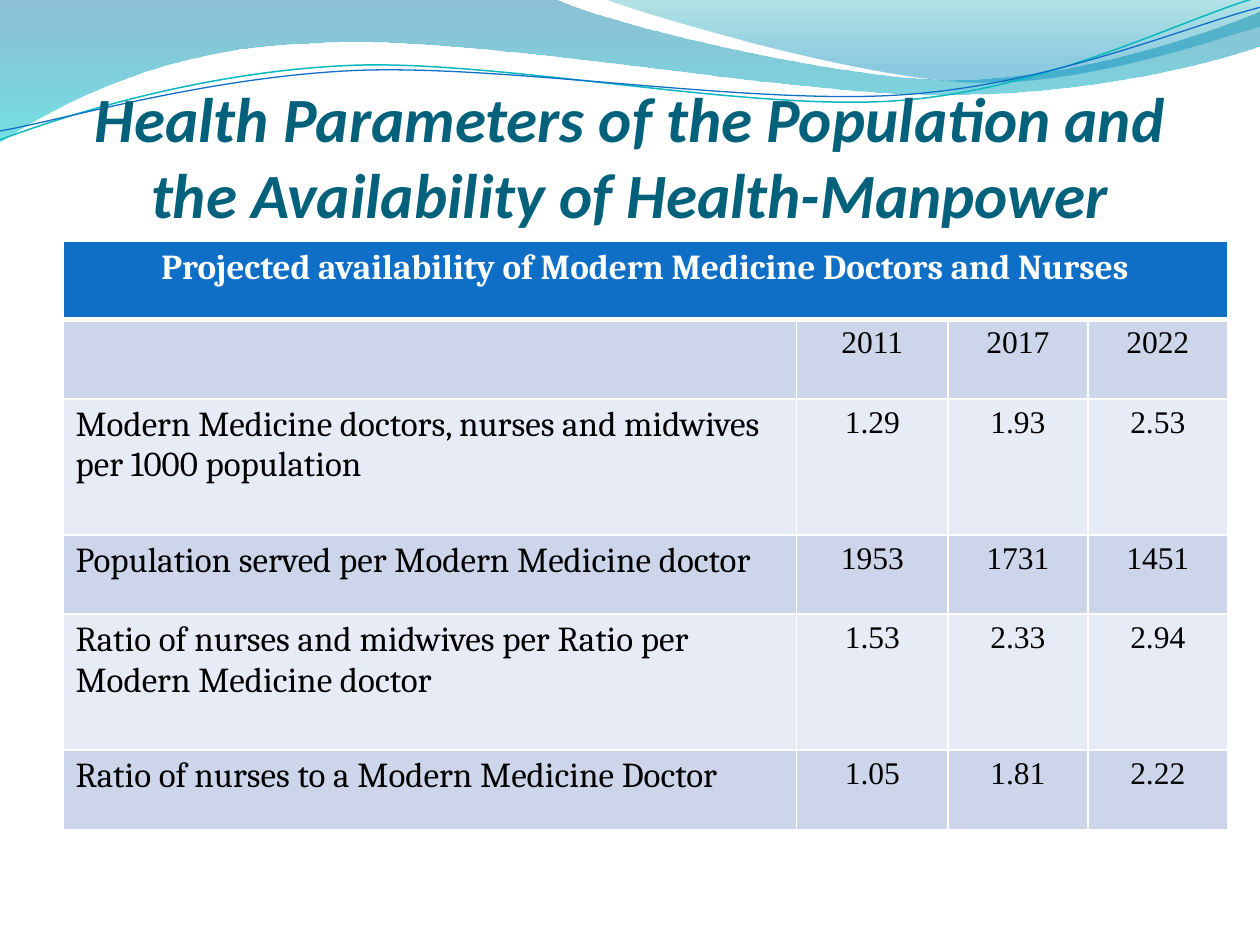
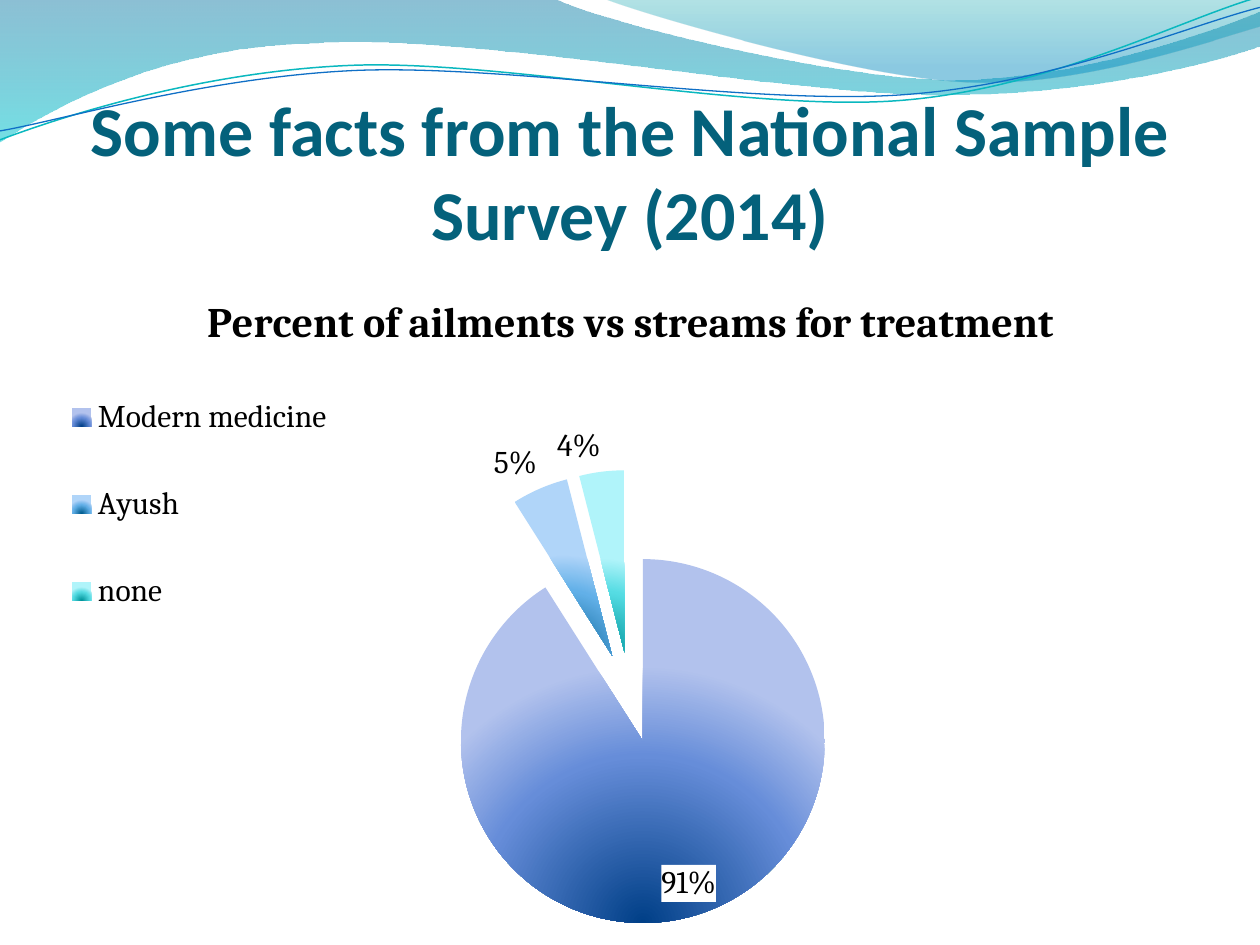
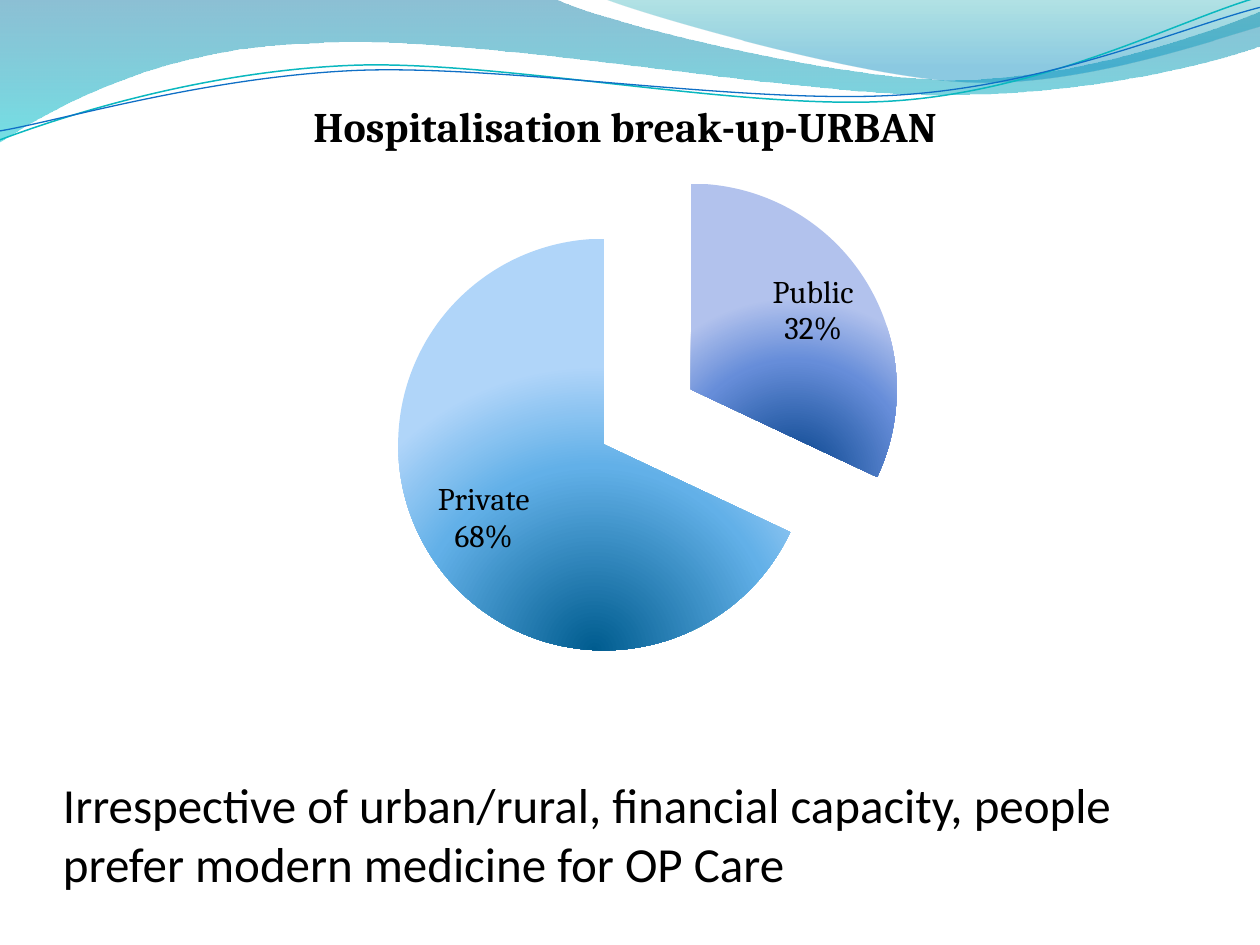
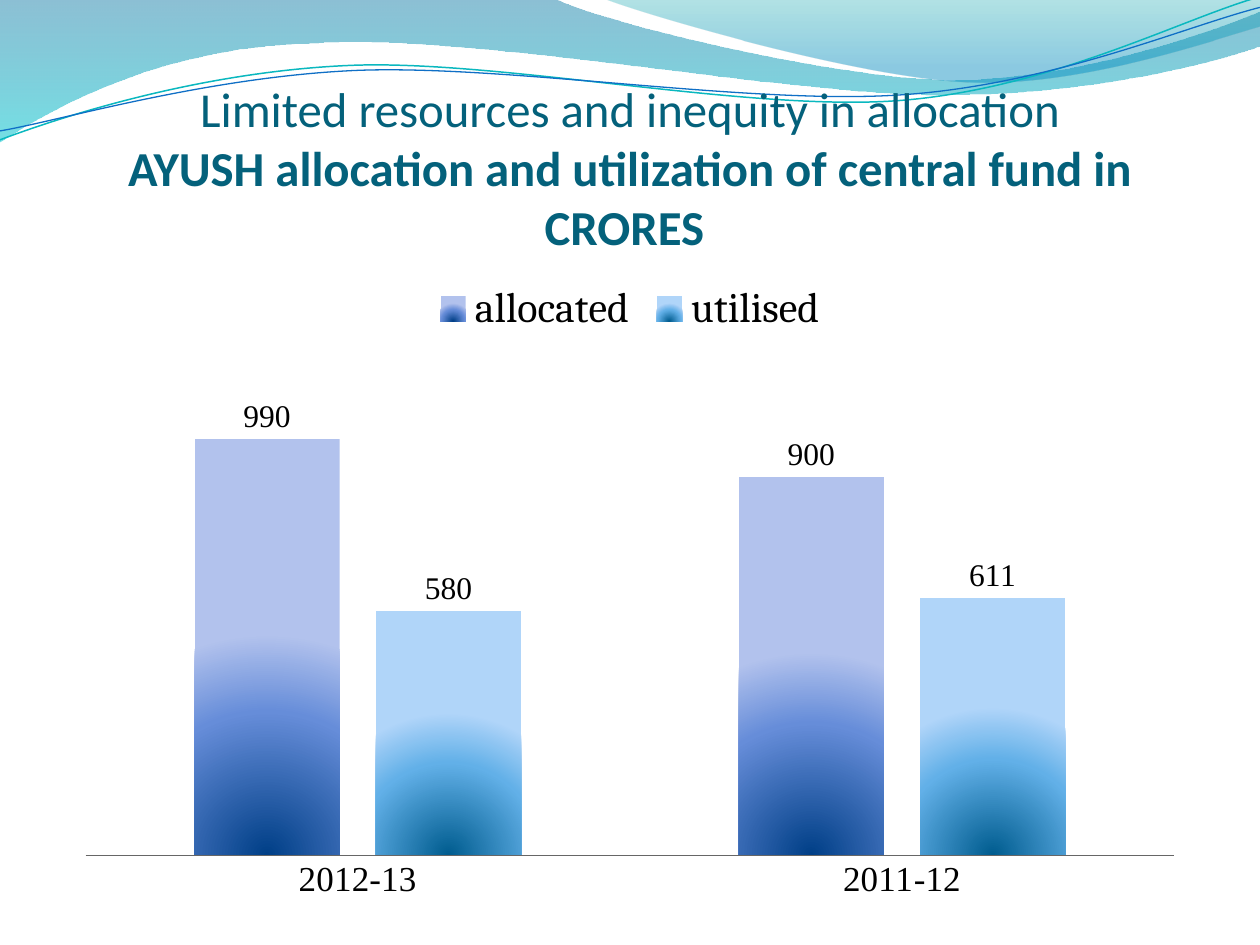
from pptx import Presentation
from pptx.chart.data import CategoryChartData
from pptx.dml.color import RGBColor
from pptx.enum.chart import XL_CHART_TYPE, XL_LABEL_POSITION, XL_LEGEND_POSITION, XL_TICK_MARK
from pptx.enum.text import MSO_ANCHOR, PP_ALIGN
from pptx.oxml import parse_xml
from pptx.oxml.ns import nsdecls, qn
from pptx.util import Cm, Pt

COLORS = {
    "title": "04617B", "text": "000000", "white": "FFFFFF", "axis": "666666",
    "header": "0F6FC6", "band_dark": "CCD5EA", "band_light": "E7EBF5",
    "teal_line": "0AB8BF", "blue_line": "0F6FC6",
}
HEADING, BODY, FIGURES = "Calibri", "Cambria", "Times New Roman"

# Gradient stops: position, colour, opacity (all in percent)
WAVE_LEFT = [(0, "0074A1", 45), (100, "00C6CF", 55)]
WAVE_RIGHT = [(0, "00A1A9", 30), (80, "008BBF", 45)]
SERIES_FILLS = [
    [(0, "003F87", 100), (65, "668DD9", 100), (100, "B2C2ED", 100)],
    [(0, "005C8F", 100), (65, "62B0E8", 100), (100, "B0D5F9", 100)],
    [(0, "00939A", 100), (65, "55DCE3", 100), (100, "B0F4FA", 100)],
]
DOWNWARD = '<a:lin ang="5400000" scaled="0"/>'
FROM_BOTTOM = '<a:path path="circle"><a:fillToRect l="50000" t="100000" r="50000"/></a:path>'

# Wave outlines in cm: a start, then lines (2 numbers) and curves (6 numbers)
LEFT_BAND = [
    (0, 0), (11.18, -0.03),
    (12.09, 0.43, 16.87, 1.6, 19.25, 1.6), (21.67, 1.6, 24.33, 0.66, 25.4, 0.23),
    (25.43, 0.91),
    (24.97, 1.12, 22.1, 1.93, 18.95, 1.91), (15.8, 1.91, 9.7, 0.71, 6.53, 0.86),
    (3.28, 0.91, 1.17, 2.11, -0.03, 2.87),
]
RIGHT_BAND = [
    (12.17, -0.03),
    (12.93, 0.28, 17.32, 1.57, 19.53, 1.65), (21.74, 1.75, 24.41, 0.81, 25.4, 0.53),
    (25.4, 0),
]
TEAL_CURVE = [
    (0, 2.82), (1.22, 2.36, 4.01, 1.45, 7.04, 1.32),
    (10.03, 1.19, 15.06, 2.26, 18.11, 2.03), (21.16, 1.8, 23.83, 0.38, 25.35, -0.05),
]
BLUE_CURVE = [
    (0, 2.64), (1.19, 2.44, 4.17, 1.55, 7.19, 1.42),
    (10.24, 1.3, 15.16, 2.13, 18.21, 1.91), (21.23, 1.7, 23.9, 0.53, 25.4, 0.15),
]


def color(name):
    return RGBColor.from_string(COLORS[name])


def paint_gradient(owner, stops, direction):
    """Give a shape or a chart format a gradient fill."""
    owner.fill.background()
    stop_xml = "".join(
        f'<a:gs pos="{position * 1000}"><a:srgbClr val="{value}">'
        f'<a:alpha val="{opacity * 1000}"/></a:srgbClr></a:gs>'
        for position, value, opacity in stops)
    gradient = parse_xml(f'<a:gradFill {nsdecls("a")} rotWithShape="1">'
                         f'<a:gsLst>{stop_xml}</a:gsLst>{direction}</a:gradFill>')
    properties = owner.element.spPr
    properties.replace(properties.find(qn("a:noFill")), gradient)


def bend(shape, outline):
    """Turn the straight segments into curves where the outline has controls."""
    for line, segment in zip(shape.element.xpath(".//a:lnTo"), outline[1:]):
        if len(segment) == 6:
            points = "".join(
                f'<a:pt x="{Cm(x) - shape.left}" y="{Cm(y) - shape.top}"/>'
                for x, y in zip(segment[::2], segment[1::2]))
            line.getparent().replace(line, parse_xml(
                f'<a:cubicBezTo {nsdecls("a")}>{points}</a:cubicBezTo>'))


def manual_layout(box, target=""):
    x, y, width, height = box
    return parse_xml(
        f'<c:layout {nsdecls("c")}><c:manualLayout>{target}'
        f'<c:xMode val="edge"/><c:yMode val="edge"/><c:x val="{x}"/><c:y val="{y}"/>'
        f'<c:w val="{width}"/><c:h val="{height}"/></c:manualLayout></c:layout>')


class Deck:
    def __init__(self):
        self.presentation = Presentation()
        self.presentation.slide_width, self.presentation.slide_height = Cm(25.4), Cm(19.05)
        self.layout = self.presentation.slide_layouts[6]
        self.slide = None

    def add_slide(self):
        self.slide = self.presentation.slides.add_slide(self.layout)

    # Shared background
    def wave(self, outline, stops=None, line=None, width=0):
        corners = [(Cm(segment[-2]), Cm(segment[-1])) for segment in outline]
        builder = self.slide.shapes.build_freeform(*corners[0])
        builder.add_line_segments(corners[1:], close=stops is not None)
        shape = builder.convert_to_shape()
        bend(shape, outline)
        shape.shadow.inherit = False
        if stops:
            paint_gradient(shape, stops, DOWNWARD)
            shape.line.fill.background()
        else:
            shape.fill.background()
            shape.line.color.rgb = color(line)
            shape.line.width = Pt(width)
        return shape

    def put_waves_on_layout(self):
        """Draw the waves on the current slide, then move them to the layout."""
        layout_tree = self.layout.shapes.element
        for placeholder in list(self.layout.placeholders):
            layout_tree.remove(placeholder.element)
        waves = [
            self.wave(LEFT_BAND, WAVE_LEFT),
            self.wave(RIGHT_BAND, WAVE_RIGHT),
            self.wave(TEAL_CURVE, line="teal_line", width=0.85),
            self.wave(BLUE_CURVE, line="blue_line", width=0.75),
        ]
        for shape in waves:
            layout_tree.append(shape.element)

    # Text
    def style(self, font, size, name, tint="text", bold=False, italic=False):
        font.size, font.name, font.bold, font.italic = Pt(size), name, bold, italic
        font.color.rgb = color(tint)

    def run(self, paragraph, text, *args, **options):
        run = paragraph.add_run()
        run.text = text
        self.style(run.font, *args, **options)

    def title(self, lines, size, top, height, tint="title", align=PP_ALIGN.CENTER):
        """Each line is a pair: text, font options."""
        box = self.slide.shapes.add_textbox(Cm(1.27), Cm(top), Cm(22.86), Cm(height))
        frame = box.text_frame
        frame.word_wrap = True
        frame.vertical_anchor = MSO_ANCHOR.BOTTOM
        frame.margin_left = frame.margin_right = frame.margin_bottom = 0
        frame.margin_top = Cm(0.13)
        paragraph = frame.paragraphs[0]
        paragraph.alignment = align
        for index, (text, options) in enumerate(lines):
            if index:
                paragraph.add_line_break()
            self.run(paragraph, text, size, HEADING, tint, **options)

    # Table
    def cell(self, cell, text, fill, size, name, align, bottom=1, **options):
        cell.fill.solid()
        cell.fill.fore_color.rgb = color(fill)
        properties = cell._tc.get_or_add_tcPr()
        for index, side in enumerate("LRTB"):
            width = Pt(bottom if side == "B" else 1)
            properties.insert(index, parse_xml(
                f'<a:ln{side} {nsdecls("a")} w="{width}"><a:solidFill>'
                f'<a:srgbClr val="{COLORS["white"]}"/></a:solidFill></a:ln{side}>'))
        for index, line in enumerate(text.split("\n") if text else []):
            frame = cell.text_frame
            paragraph = frame.add_paragraph() if index else frame.paragraphs[0]
            paragraph.alignment = align
            self.run(paragraph, line, size, name, **options)

    def table(self, heading, rows, left, top, widths, heights):
        table = self.slide.shapes.add_table(
            len(rows) + 1, len(widths), Cm(left), Cm(top),
            Cm(sum(widths)), Cm(sum(heights))).table
        for column, width in zip(table.columns, widths):
            column.width = Cm(width)
        for row, height in zip(table.rows, heights):
            row.height = Cm(height)
        table.cell(0, 0).merge(table.cell(0, len(widths) - 1))
        for index in range(len(widths)):
            self.cell(table.cell(0, index), "" if index else heading, "header", 20, BODY,
                      PP_ALIGN.CENTER, bottom=3, tint="white", bold=True)
        for row_index, row in enumerate(rows, 1):
            fill = "band_dark" if row_index % 2 else "band_light"
            for index, text in enumerate(row):
                look = (18, FIGURES, PP_ALIGN.CENTER) if index else (20, BODY, PP_ALIGN.LEFT)
                self.cell(table.cell(row_index, index), text, fill, *look)

    # Charts
    def chart(self, kind, categories, series, box, plot_box, title=None):
        data = CategoryChartData()
        data.categories = categories
        for name, values in series:
            data.add_series(name, values)
        chart = self.slide.shapes.add_chart(kind, *(Cm(v) for v in box), data).chart
        self.style(chart.font, 10, BODY)
        chart.has_legend = False
        chart.has_title = title is not None
        if title:
            self.run(chart.chart_title.text_frame.paragraphs[0], title, 24, BODY, bold=True)
            chart.chart_title.include_in_layout = False
        plot_area = chart.element.xpath(".//c:plotArea")[0]
        for old in plot_area.findall(qn("c:layout")):
            plot_area.remove(old)
        plot_area.insert(0, manual_layout(plot_box, '<c:layoutTarget val="inner"/>'))
        return chart

    def legend(self, chart, size, box=None):
        chart.has_legend = True
        chart.legend.position = XL_LEGEND_POSITION.TOP
        chart.legend.include_in_layout = False
        self.style(chart.legend.font, size, BODY)
        if box:
            chart.element.xpath(".//c:legendPos")[0].addnext(manual_layout(box))

    def pie(self, categories, values, box, plot_box, title, with_names=False):
        chart = self.chart(XL_CHART_TYPE.PIE, categories, [("Series 1", values)],
                           box, plot_box, title)
        plot = chart.plots[0]
        plot.vary_by_categories = True
        series = plot.series[0]
        chart.element.xpath(".//c:ser/c:tx")[0].addnext(
            parse_xml(f'<c:explosion {nsdecls("c")} val="25"/>'))
        for index in range(len(values)):
            paint_gradient(series.points[index].format, SERIES_FILLS[index], FROM_BOTTOM)
        labels = series.data_labels
        labels.show_value = False
        labels.show_percentage = True
        labels.show_category_name = with_names
        labels.number_format, labels.number_format_is_linked = "0%", False
        labels.position = XL_LABEL_POSITION.BEST_FIT
        self.style(labels.font, 18, BODY)
        if with_names:
            chart.element.xpath(".//c:dLbls/c:showBubbleSize")[0].addnext(
                parse_xml(f'<c:separator {nsdecls("c")}>\n</c:separator>'))
        return chart

    def back_labels_with_white(self, chart):
        chart.element.xpath(".//c:ser/c:dLbls/c:txPr")[0].addprevious(parse_xml(
            f'<c:spPr {nsdecls("c", "a")}><a:solidFill>'
            f'<a:srgbClr val="{COLORS["white"]}"/></a:solidFill></c:spPr>'))

    def columns(self, categories, series, box, plot_box):
        chart = self.chart(XL_CHART_TYPE.COLUMN_CLUSTERED, categories, series, box, plot_box)
        plot = chart.plots[0]
        plot.vary_by_categories = False
        plot.gap_width, plot.overlap = 150, -25
        for item, stops in zip(plot.series, SERIES_FILLS):
            paint_gradient(item.format, stops, FROM_BOTTOM)
            labels = item.data_labels
            labels.show_value = True
            labels.position = XL_LABEL_POSITION.OUTSIDE_END
            self.style(labels.font, 18, FIGURES)
        value_axis, category_axis = chart.value_axis, chart.category_axis
        value_axis.visible = value_axis.has_major_gridlines = False
        value_axis.minimum_scale, value_axis.maximum_scale = 0, 1200
        category_axis.major_tick_mark = XL_TICK_MARK.NONE
        category_axis.format.line.color.rgb = color("axis")
        category_axis.format.line.width = Pt(0.5)
        self.style(category_axis.tick_labels.font, 20, FIGURES)
        return chart


def main():
    deck = Deck()

    # Slide 1: availability of doctors and nurses
    deck.add_slide()
    deck.put_waves_on_layout()
    deck.title([("Health Parameters of the Population and the Availability of Health-Manpower",
                 {"bold": True, "italic": True})], 36, 1.27, 3.38)
    deck.table(
        "Projected availability of Modern Medicine Doctors and Nurses",
        [
            ("", "2011", "2017", "2022"),
            ("Modern Medicine doctors, nurses and midwives per 1000 population",
             "1.29", "1.93", "2.53"),
            ("Population served per Modern Medicine doctor", "1953", "1731", "1451"),
            ("Ratio of nurses and midwives per Ratio per\nModern Medicine doctor",
             "1.53", "2.33", "2.94"),
            ("Ratio of nurses to a Modern Medicine Doctor", "1.05", "1.81", "2.22"),
        ],
        1.27, 4.87, [14.79, 3.05, 2.82, 2.82], [1.57, 1.6, 2.74, 1.6, 2.74, 1.6])

    # Slide 2: streams of treatment
    deck.add_slide()
    deck.title([("Some facts from the National Sample Survey (2014)", {"bold": True})],
               40, 1.96, 3.18)
    streams = deck.pie(["Modern medicine", "Ayush", "none"], [91, 5, 4],
                       (0.64, 5.38, 24.13, 13.67), (0.31, 0.29, 0.38, 0.69),
                       "Percent of ailments vs streams for treatment")
    deck.legend(streams, 18, (0.02, 0.12, 0.24, 0.46))
    deck.back_labels_with_white(streams)

    # Slide 3: public and private hospitals
    deck.add_slide()
    deck.title([("Irrespective of urban/rural, financial capacity, people prefer "
                 "modern medicine for OP Care", {})],
               28, 14.6, 3.38, tint="text", align=PP_ALIGN.LEFT)
    deck.pie(["Public", "Private"], [32, 68], (1.27, 1.47, 22.66, 12.5),
             (0.26, 0.14, 0.52, 0.83), "Hospitalisation break-up-URBAN", with_names=True)

    # Slide 4: allocation and use of funds
    deck.add_slide()
    deck.title([("Limited resources and inequity in allocation", {}),
                ("AYUSH allocation and utilization of central fund in CRORES ",
                 {"bold": True})], 27.9, 1.96, 3.18)
    funds = deck.columns(["2012-13", "2011-12"],
                         [("allocated", [990, 900]), ("utilised", [580, 611])],
                         (1.27, 5.38, 22.86, 13.03), (0.02, 0.13, 0.96, 0.78))
    deck.legend(funds, 24)

    deck.presentation.save("out.pptx")


if __name__ == "__main__":
    main()
